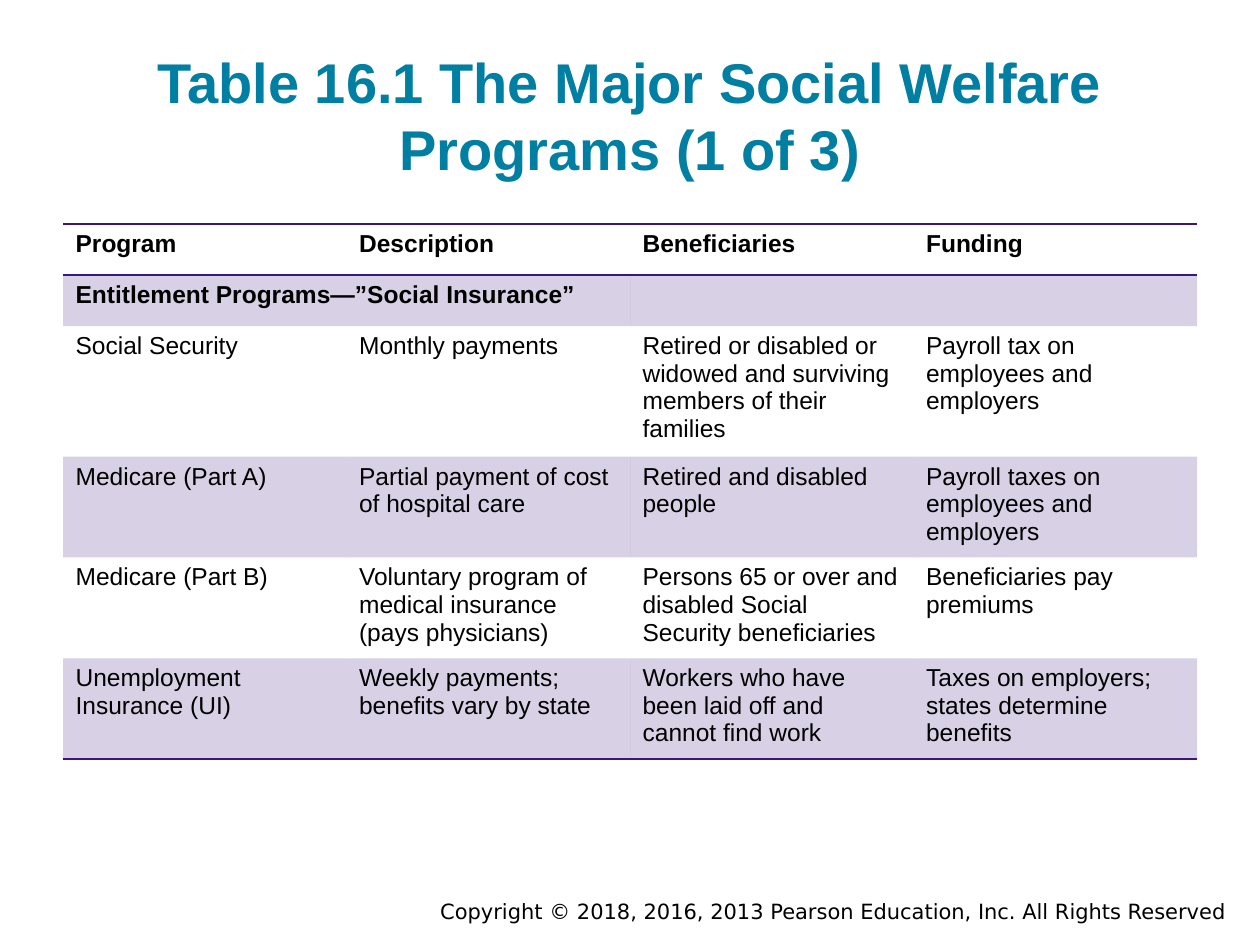
import pptx
import pptx.dml.color
import pptx.enum.text
import pptx.oxml
import pptx.oxml.ns
import pptx.util

Pt = pptx.util.Pt
ALIGN = pptx.enum.text.PP_ALIGN
PURPLE = "3C1581"
NO_STYLE = "{2D5ABB26-0587-4C30-8999-92F81FD0307C}"
SECTION_ROW = 1
ROWS = [
    ["Program", "Description", "Beneficiaries", "Funding"],
    ["Entitlement Programs—”Social Insurance”", "", "", ""],
    ["Social Security", "Monthly payments",
     "Retired or disabled or widowed and surviving members of their families",
     "Payroll tax on employees and employers"],
    ["Medicare (Part A)", "Partial payment of cost of hospital care",
     "Retired and disabled people", "Payroll taxes on employees and employers"],
    ["Medicare (Part B)", "Voluntary program of medical insurance (pays physicians)",
     "Persons 65 or over and disabled Social Security beneficiaries",
     "Beneficiaries pay premiums"],
    ["Unemployment Insurance (UI)", "Weekly payments; benefits vary by state",
     "Workers who have been laid off and cannot find work",
     "Taxes on employers; states determine benefits"],
]


def color(value):
    """Turn a hex string into a colour."""
    return pptx.dml.color.RGBColor.from_string(value)


def style_font(font, name, size, value, bold=False):
    """Set the face, size, colour and weight of a font."""
    font.name, font.size, font.bold = name, Pt(size), bold
    font.color.rgb = color(value)


def place(shape, box):
    """Move and size a shape to a left, top, width, height box."""
    shape.left, shape.top, shape.width, shape.height = map(Pt, box)


def add_border(cell, tag):
    """Draw a one-point purple line on one side of a cell."""
    cell._tc.get_or_add_tcPr().append(pptx.oxml.parse_xml(
        f'<a:{tag} {pptx.oxml.ns.nsdecls("a")} w="12700"><a:solidFill>'
        f'<a:srgbClr val="{PURPLE}"/></a:solidFill></a:{tag}>'))


def shade(cell):
    """Fill a cell with purple at twenty percent opacity."""
    cell.fill.solid()
    cell.fill.fore_color.rgb = color(PURPLE)
    swatch = cell._tc.tcPr.find(".//" + pptx.oxml.ns.qn("a:solidFill") + "[last()]")
    swatch = cell._tc.tcPr.find(pptx.oxml.ns.qn("a:solidFill"))[0]
    swatch.append(pptx.oxml.parse_xml(
        f'<a:alpha {pptx.oxml.ns.nsdecls("a")} val="20000"/>'))


def add_title(page, box, text):
    """Fill the title placeholder."""
    title = page.shapes.title
    place(title, box)
    frame = title.text_frame
    frame.text = text
    frame.word_wrap = True
    frame.auto_size = pptx.enum.text.MSO_AUTO_SIZE.NONE
    frame.vertical_anchor = pptx.enum.text.MSO_ANCHOR.BOTTOM
    frame.margin_top = frame.margin_bottom = Pt(7.2)
    para = frame.paragraphs[0]
    para.alignment = ALIGN.CENTER
    style_font(para.font, "Arial", 32, "007FA3", True)


def add_programs(page, box):
    """Add the ruled and banded table of programs."""
    shape = page.shapes.add_table(len(ROWS), len(ROWS[0]), *map(Pt, box))
    table = shape.table
    table._tbl.tblPr.find(pptx.oxml.ns.qn("a:tableStyleId")).text = NO_STYLE
    for row_index, texts in enumerate(ROWS):
        for column_index, text in enumerate(texts):
            cell = table.cell(row_index, column_index)
            cell.text = text
            style_font(cell.text_frame.paragraphs[0].font, "Arial", 14, "000000",
                       row_index <= SECTION_ROW)
            if row_index == 0:
                add_border(cell, "lnT")
            if row_index in (0, len(ROWS) - 1):
                add_border(cell, "lnB")
            if row_index % 2:
                shade(cell)
            else:
                cell.fill.background()
    table.cell(SECTION_ROW, 0).merge(table.cell(SECTION_ROW, 1))


def add_copyright(page, box, text):
    """Add the right-aligned copyright line."""
    frame = page.shapes.add_textbox(*map(Pt, box)).text_frame
    frame.word_wrap = True
    frame.text = text
    para = frame.paragraphs[0]
    para.alignment = ALIGN.RIGHT
    style_font(para.font, "DejaVu Sans", 12, "000000")


def main():
    """Build and save the slide."""
    deck = pptx.Presentation()
    deck.slide_width, deck.slide_height = Pt(720), Pt(540)
    page = deck.slides.add_slide(deck.slide_layouts.get_by_name("Title Only"))
    add_copyright(page, (144, 510, 564, 21.6),
                  "Copyright © 2018, 2016, 2013 Pearson Education, Inc. All Rights Reserved")
    add_title(page, (36, 17.5, 648, 93.6),
              "Table 16.1 The Major Social Welfare Programs (1 of 3)")
    add_programs(page, (36, 128, 648, 29.2 * len(ROWS)))
    deck.save("out.pptx")


if __name__ == "__main__":
    main()
